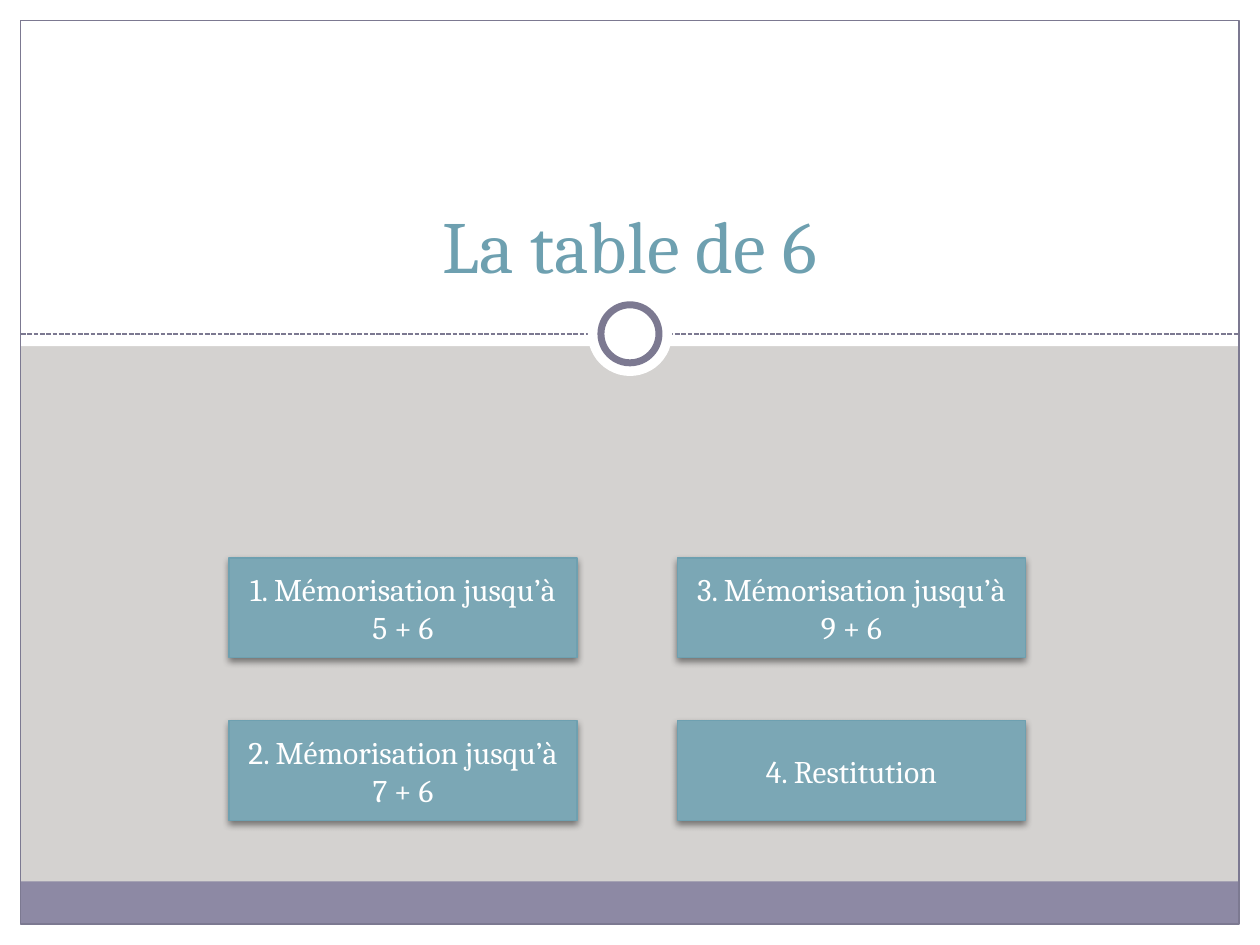
from lxml.etree import SubElement
from pptx import Presentation
from pptx.dml.color import RGBColor
from pptx.enum.dml import MSO_LINE
from pptx.enum.shapes import MSO_CONNECTOR, MSO_SHAPE as Preset
from pptx.enum.text import MSO_ANCHOR as Anchor, PP_ALIGN as Align
from pptx.oxml.ns import qn
from pptx.util import Cm, Pt

WHITE = RGBColor(0xFF, 0xFF, 0xFF)
GREY = RGBColor(0xD4, 0xD2, 0xD0)
MAUVE = RGBColor(0x8D, 0x89, 0xA4)
PURPLE = RGBColor(0x7C, 0x79, 0x91)
TEAL = RGBColor(0x6E, 0xA0, 0xB0)
BUTTON_TEAL = RGBColor(0x7B, 0xA7, 0xB5)

FONT = "Cambria"
WIDTH, HEIGHT = 25.4, 19.05
MARGIN = 0.42
HEADER_HEIGHT = 6.98
DIVIDER_Y = 6.73

STEPS = [
    "1. Mémorisation jusqu’à 5 + 6",
    "2. Mémorisation jusqu’à 7 + 6",
    "3. Mémorisation jusqu’à 9 + 6",
    "4. Restitution",
]


def add_panel(slide, preset, box, fill=None, line=None, weight=0.75):
    panel = slide.shapes.add_shape(preset, *map(Cm, box))
    panel.shadow.inherit = False
    if fill is None:
        panel.fill.background()
    else:
        panel.fill.solid()
        panel.fill.fore_color.rgb = fill
    if line is None:
        panel.line.fill.background()
    else:
        panel.line.color.rgb = line
        panel.line.width = Pt(weight)
    return panel


def write_text(frame, text, size, color, anchor):
    frame.word_wrap = True
    frame.vertical_anchor = anchor
    paragraph = frame.paragraphs[0]
    paragraph.alignment = Align.CENTER
    run = paragraph.add_run()
    run.text = text
    run.font.name = FONT
    run.font.size = Pt(size)
    run.font.color.rgb = color


def add_drop_shadow(button):
    effects = button._element.spPr.find(qn("a:effectLst"))
    shadow = SubElement(effects, qn("a:outerShdw"), blurRad=str(Pt(4)),
                        dist=str(Pt(2)), dir="5400000", rotWithShape="0")
    black = SubElement(shadow, qn("a:srgbClr"), val="000000")
    SubElement(black, qn("a:alpha"), val="45000")


def draw_backdrop(slide, left, top, width, height):
    """White edges and header, footer band and thin frame."""
    right, bottom = left + width, top + height
    for edge in [
        (left, bottom - MARGIN, width, MARGIN),
        (right - MARGIN, top, MARGIN, height),
        (left, top, MARGIN, height),
        (left, top, width, HEADER_HEIGHT),
    ]:
        add_panel(slide, Preset.RECTANGLE, edge, WHITE)

    inner_width = width - 2 * MARGIN
    footer_height = 0.86
    footer = (left + MARGIN, bottom - MARGIN - footer_height, inner_width, footer_height)
    add_panel(slide, Preset.RECTANGLE, footer, MAUVE)
    draw_divider(slide, left + MARGIN, top + DIVIDER_Y, inner_width)
    frame = (left + MARGIN, top + MARGIN, inner_width, height - 2 * MARGIN)
    add_panel(slide, Preset.RECTANGLE, frame, line=PURPLE)
    draw_ring(slide, left + width / 2, top + DIVIDER_Y)


def draw_divider(slide, left, y, width):
    divider = slide.shapes.add_connector(
        MSO_CONNECTOR.STRAIGHT, Cm(left), Cm(y), Cm(left + width), Cm(y))
    divider.line.color.rgb = PURPLE
    divider.line.width = Pt(0.9)
    divider.line.dash_style = MSO_LINE.SQUARE_DOT
    SubElement(divider._element.spPr, qn("a:effectLst"))


def draw_ring(slide, center_x, center_y):
    """White disc with a purple ring, centred on the divider."""
    for size, line in [(1.7, None), (1.17, PURPLE)]:
        box = (center_x - size / 2, center_y - size / 2, size, size)
        add_panel(slide, Preset.OVAL, box, WHITE, line, weight=4)


def draw_title(slide, left, top, width, height):
    title = slide.shapes.add_textbox(*map(Cm, (left, top, width, height)))
    write_text(title.text_frame, "La table de 6", 42, TEAL, Anchor.BOTTOM)


def draw_steps(slide, left, top, width, height):
    """Two columns of buttons, filled column by column."""
    button_width, button_height = 7.01, 2.01
    for index, step in enumerate(STEPS):
        column, row = divmod(index, 2)
        box = (left + column * (width - button_width),
               top + row * (height - button_height), button_width, button_height)
        button = add_panel(slide, Preset.ACTION_BUTTON_CUSTOM, box, BUTTON_TEAL, TEAL)
        add_drop_shadow(button)
        write_text(button.text_frame, step, 18, WHITE, Anchor.MIDDLE)


def main():
    deck = Presentation()
    deck.slide_width, deck.slide_height = Cm(WIDTH), Cm(HEIGHT)
    slide = deck.slides.add_slide(deck.slide_layouts[6])
    slide.background.fill.solid()
    slide.background.fill.fore_color.rgb = GREY

    draw_backdrop(slide, 0, 0, WIDTH, HEIGHT)
    draw_title(slide, 1.9, 1.07, 21.6, 4.87)
    draw_steps(slide, 4.62, 11.25, 16.05, 5.29)
    deck.save("out.pptx")


if __name__ == "__main__":
    main()
